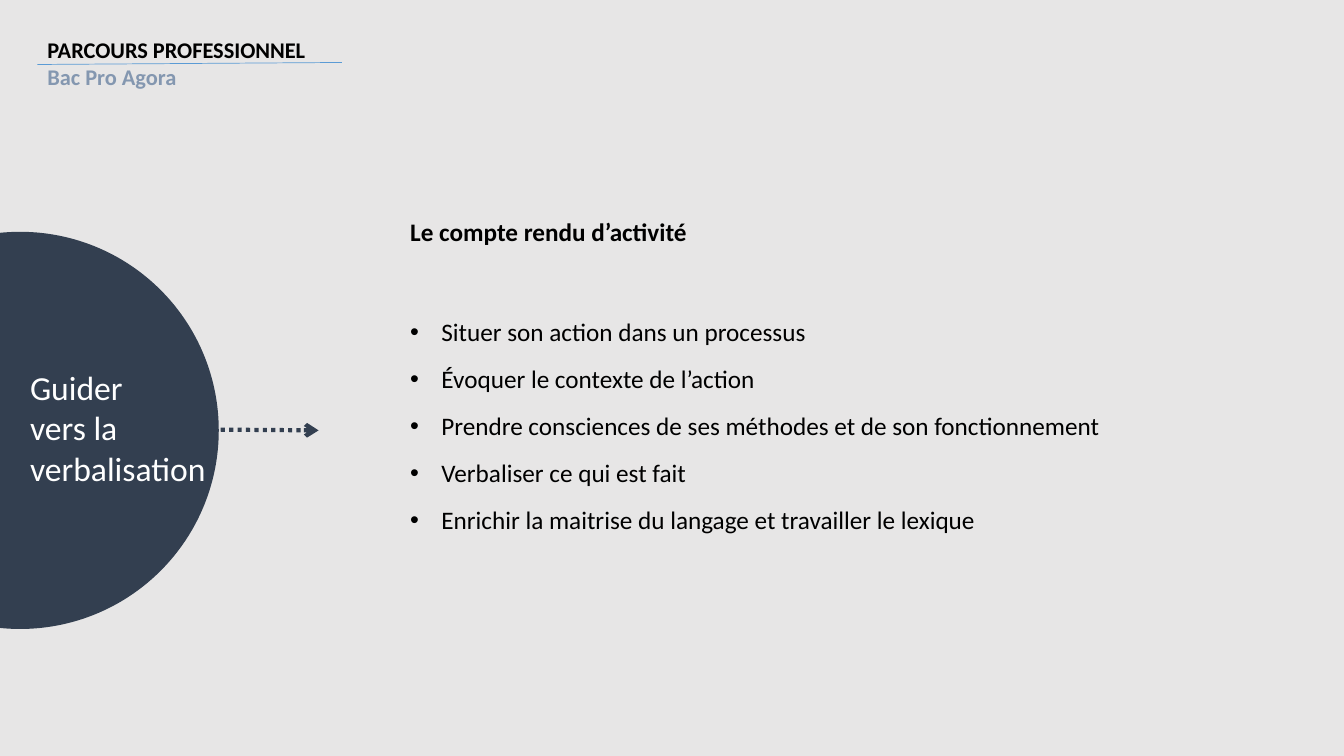
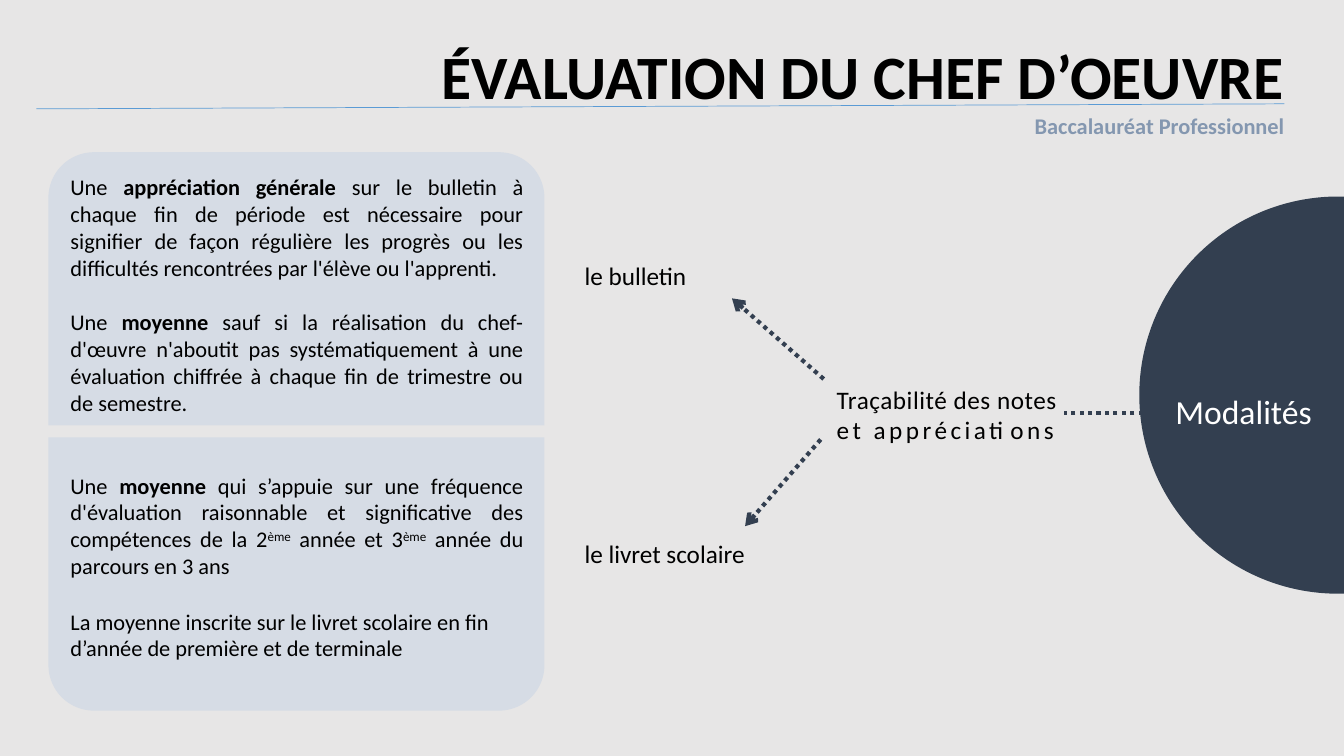
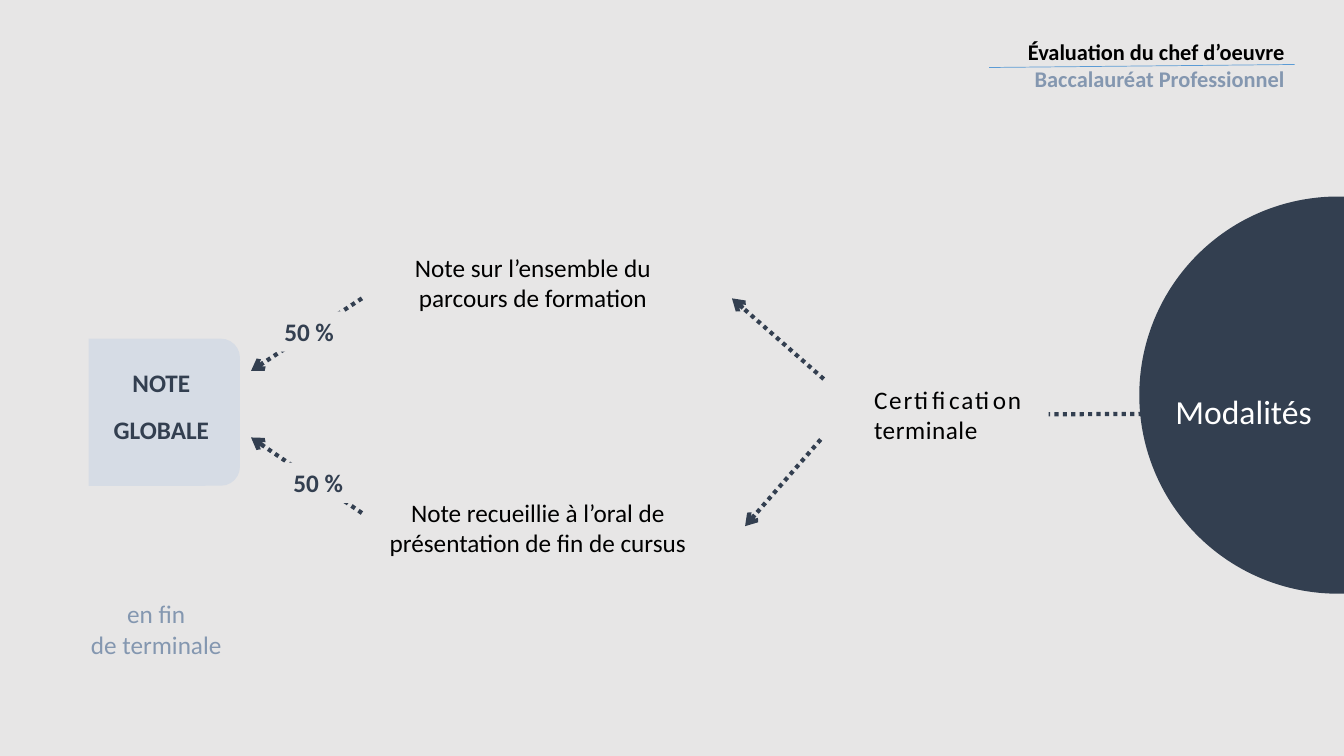
from pptx import Presentation
from pptx.dml.color import RGBColor
from pptx.enum import dml, shapes, text
from pptx.oxml import ns
from pptx.util import Inches, Pt
from lxml import etree

NAVY = RGBColor(0x33, 0x3F, 0x50)
PALE = RGBColor(0xD6, 0xDC, 0xE5)
SLATE = RGBColor(0x84, 0x97, 0xB0)
BLUE = RGBColor(0x5B, 0x9B, 0xD5)
GREY = RGBColor(0xE7, 0xE6, 0xE6)
BLACK = RGBColor(0, 0, 0)
WHITE = RGBColor(255, 255, 255)
FONT = "Calibri"
LEFT, MID, RIGHT, JUST = (text.PP_ALIGN.LEFT, text.PP_ALIGN.CENTER,
                          text.PP_ALIGN.RIGHT, text.PP_ALIGN.JUSTIFY)
ROUND = shapes.MSO_SHAPE.ROUND_2_SAME_RECTANGLE
BOLD = "bold"
SUPER = {"baseline": "30000"}


class Deck:
    def __init__(self):
        self.prs = Presentation()
        self.prs.slide_width = Inches(13.33)
        self.prs.slide_height = Inches(7.5)
        fill = self.prs.slide_master.background.fill
        fill.solid()
        fill.fore_color.rgb = GREY
        self.slide = None

    def place(self, shape, box):
        shape.left, shape.top, shape.width, shape.height = map(Inches, box)

    def style(self, run, size, color, bold=False):
        font = run.font
        font.name, font.size, font.bold = FONT, Pt(size), bold
        font.color.rgb = color

    def page(self, box, lines, rule, align=RIGHT, size=16):
        self.slide = self.prs.slides.add_slide(self.prs.slide_layouts[5])
        title = self.slide.shapes.title
        self.place(title, box)
        frame = title.text_frame
        frame.text = "\n".join(lines)
        frame.word_wrap = True
        frame.auto_size = text.MSO_AUTO_SIZE.NONE
        frame.vertical_anchor = text.MSO_ANCHOR.TOP
        looks = ((size, BLACK), (16, SLATE))
        for para, (points, color) in zip(frame.paragraphs, looks):
            para.alignment = align
            para.line_spacing = 1.0
            self.style(para.runs[0], points, color, True)
        self.line(*rule, color=BLUE, width=0.5, dots=False)

    def text(self, box, paras, size=18, color=BLACK, bold=False, align=LEFT,
             gap=0, bullet=False, wrap=True, fill=None):
        shape = self.slide.shapes.add_textbox(*map(Inches, box))
        if fill is not None:
            shape.fill.solid()
            shape.fill.fore_color.rgb = fill
        frame = shape.text_frame
        frame.word_wrap = wrap
        for i, item in enumerate(paras):
            para = frame.add_paragraph() if i else frame.paragraphs[0]
            para.alignment = align
            if i:
                para.space_before = Pt(gap)
            if isinstance(item, str):
                para.text = item
                for run in para.runs:
                    self.style(run, size, color, bold)
            else:
                self.mix(para, item, size, color)
            if bullet:
                self.bullet(para)

    def mix(self, para, parts, size, color):
        for words, mark in parts:
            run = para.add_run()
            run.text = words
            self.style(run, size, color, mark == BOLD)
            if isinstance(mark, dict):
                for key, value in mark.items():
                    run.font._element.set(key, value)

    def bullet(self, para):
        props = para._p.get_or_add_pPr()
        props.set("marL", str(Inches(0.31)))
        props.set("indent", str(-Inches(0.31)))
        etree.SubElement(props, ns.qn("a:buFont")).set("typeface", "Arial")
        etree.SubElement(props, ns.qn("a:buChar")).set("char", "•")

    def shape(self, kind, box, color, turn=0, adjust=None):
        shape = self.slide.shapes.add_shape(kind, *map(Inches, box))
        shape.shadow.inherit = False
        shape.fill.solid()
        shape.fill.fore_color.rgb = color
        shape.line.fill.background()
        shape.rotation = turn
        if adjust is not None:
            shape.adjustments[0] = adjust

    def disc(self, left, top):
        self.shape(shapes.MSO_SHAPE.OVAL, (left, top, 3.94, 3.94), NAVY)

    def line(self, start, end, color=NAVY, width=3, dots=True, head=None):
        line = self.slide.shapes.add_connector(
            shapes.MSO_CONNECTOR.STRAIGHT, *map(Inches, start + end))
        line.line.color.rgb = color
        line.line.width = Pt(width)
        if dots:
            line.line.dash_style = dml.MSO_LINE.ROUND_DOT
        if head:
            tail = etree.SubElement(line.line._get_or_add_ln(), ns.qn("a:tailEnd"))
            tail.set("type", head)
        etree.SubElement(line._element.spPr, ns.qn("a:effectLst"))

    def arrow(self, start, end):
        self.line(start, end, head="arrow")

    def modes(self, start, end, left, parts):
        self.disc(11.3, 1.95)
        self.line(start, end)
        self.text((11.56, 3.83, 1.7, 0.5), ["Modalités"], 24, WHITE)
        self.text((left, 3.76, 2.51, 0.71), [parts])
        self.arrow((8.17, 3.76), (7.26, 2.96))
        self.arrow((8.14, 4.36), (7.39, 5.22))


def guide(deck):
    deck.page((0.37, 0.31, 3.15, 0.64),
              ["PARCOURS PROFESSIONNEL", "Bac Pro Agora"],
              ((0.37, 0.64), (3.39, 0.62)), LEFT)
    deck.text((3.97, 2.1, 3.64, 0.4), ["Le compte rendu d’activité"], bold=True)
    deck.text((3.97, 3.09, 7.43, 2.29), [
        "Situer son action dans un processus",
        "Évoquer le contexte de l’action",
        "Prendre consciences de ses méthodes et de son fonctionnement",
        "Verbaliser ce qui est fait",
        "Enrichir la maitrise du langage et travailler le lexique",
    ], gap=12, bullet=True)
    deck.disc(-1.77, 2.3)
    deck.arrow((0.52, 4.25), (3.16, 4.27))
    deck.text((0.2, 3.59, 2.24, 1.31), ["Guider", "vers la verbalisation"],
              24, WHITE)


def marks(deck):
    deck.page((4.11, 0.33, 8.73, 1.11),
              ["ÉVALUATION DU CHEF D’OEUVRE", "Baccalauréat Professionnel"],
              ((0.36, 1.08), (12.74, 1.03)), size=44)
    for top, turn in ((1.51, 0), (4.34, 180)):
        deck.shape(ROUND, (0.48, top, 4.92, 2.71), PALE, turn)
    deck.modes((13.17, 4.1), (10.55, 4.1), 8.2, [
        ("Traçabilité des notes ", {"spc": "40"}),
        ("et appréciations", {"spc": "250"})])
    for top, label in ((2.53, "le bulletin"), (5.29, "le livret scolaire")):
        deck.text((5.7, top, 2, 0.4), [label])
    deck.text((0.6, 1.67, 4.69, 2.5), [
        [("Une ", None), ("appréciation générale ", BOLD),
         ("sur le bulletin à chaque fin de période est nécessaire pour "
          "signifier de façon régulière les progrès ou les difficultés "
          "rencontrées par l'élève ou l'apprenti.", None)],
        [("Une ", None), ("moyenne", BOLD),
         (" sauf si la réalisation du chef-d'œuvre n'aboutit pas "
          "systématiquement à une évaluation chiffrée à chaque fin de "
          "trimestre ou de semestre.", None)],
    ], 16, align=JUST, gap=19.5)
    deck.text((0.6, 4.63, 4.69, 1.18), [
        [("Une ", None), ("moyenne", BOLD),
         (" qui s’appuie sur une fréquence d'évaluation raisonnable et "
          "significative des compétences de la 2", None),
         ("ème", SUPER), (" année et 3", None), ("ème", SUPER),
         (" année du parcours en 3 ans", None)],
    ], 16, align=JUST)
    deck.text((0.6, 5.98, 4.69, 0.64), [
        "La moyenne inscrite sur le livret scolaire en fin d’année de "
        "première et de terminale"], 16)


def final(deck):
    deck.page((9.69, 0.33, 3.15, 0.64),
              ["Évaluation du chef d’oeuvre", "Baccalauréat Professionnel"],
              ((12.84, 0.64), (9.81, 0.67)))
    deck.shape(ROUND, (0.9, 3.34, 1.46, 1.5), PALE, 90, 0.13)
    deck.text((0.72, 5.89, 1.66, 0.71), ["en fin\vde terminale"],
              color=SLATE, align=MID)
    deck.modes((13.17, 4.1), (10.4, 4.11), 8.57, [
        ("Certification ", {"spc": "130"}), ("terminale", {"spc": "40"})])
    deck.text((3.72, 2.45, 3.13, 0.71),
              ["Note sur l’ensemble du parcours de formation"], align=MID)
    deck.text((3.72, 4.88, 3.23, 0.71),
              ["Note recueillie à l’oral de présentation de fin de cursus"],
              align=MID)
    deck.text((0.99, 3.59, 1.22, 0.88), ["NOTE", "GLOBALE"],
              color=NAVY, bold=True, align=MID, gap=12)
    for start, end, left, top in (((3.59, 2.96), (2.49, 3.68), 2.72, 3.09),
                                  ((3.59, 5.09), (2.49, 4.34), 2.81, 4.59)):
        deck.arrow(start, end)
        deck.text((left, top, 0.69, 0.4), ["50 %"], color=NAVY, bold=True,
                  align=MID, wrap=False, fill=GREY)


def main():
    deck = Deck()
    for build in (guide, marks, final):
        build(deck)
    deck.prs.save("out.pptx")


if __name__ == "__main__":
    main()
